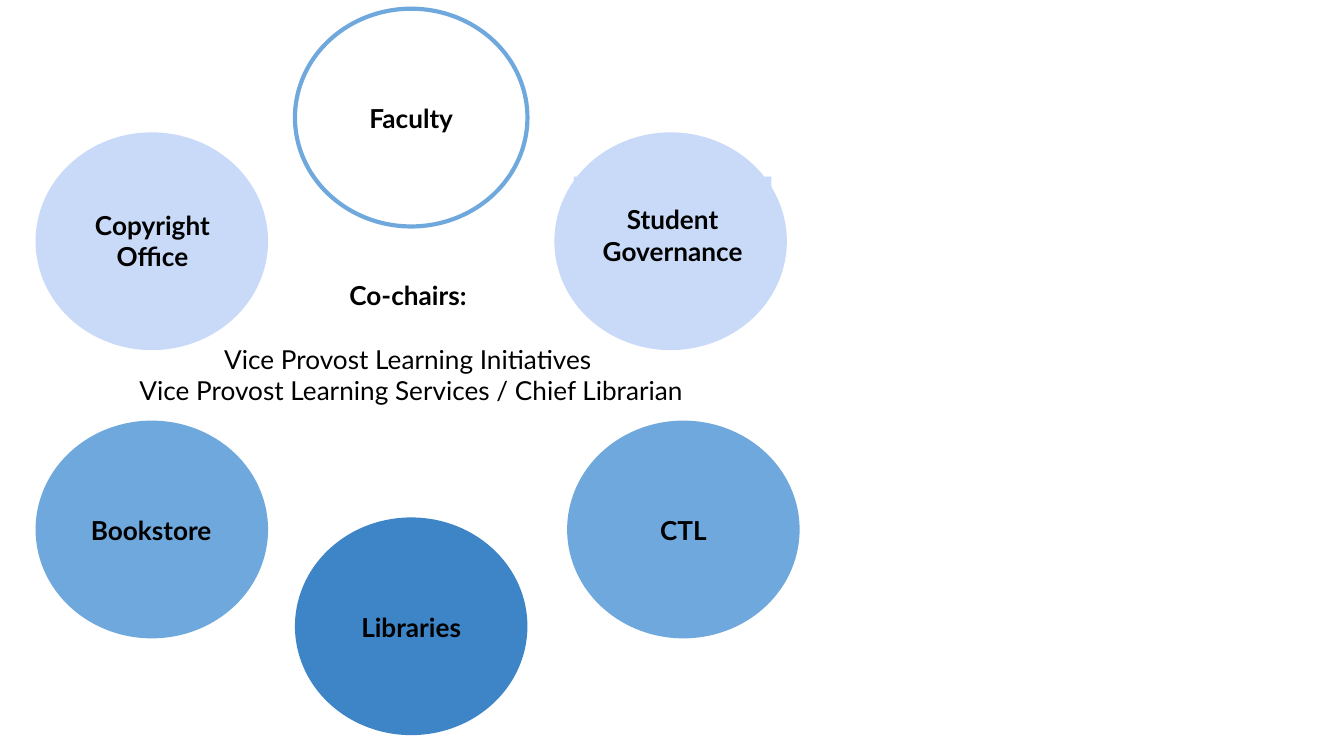
from pptx import Presentation
from pptx import util as u
from pptx.dml.color import RGBColor
from pptx.enum import shapes, text

PX = 4572  # 200 px to the inch
COLORS = {"pale": "C9DAF8", "mid": "6FA8DC", "deep": "3D85C6", "ink": "000000"}
CIRCLE_W, CIRCLE_H = 346, 324


def rgb(name):
    return RGBColor.from_string(COLORS[name])


def add_text(parent, box, lines, fill=None, gap=0):
    """Add a centred text box; lines are (text, bold) pairs, gap follows the first."""
    sp = parent.add_textbox(*(v * PX for v in box))
    if fill:
        sp.fill.solid()
        sp.fill.fore_color.rgb = rgb(fill)
    tf = sp.text_frame
    tf.word_wrap = True
    tf.auto_size = text.MSO_AUTO_SIZE.NONE
    tf.vertical_anchor = text.MSO_ANCHOR.MIDDLE
    tf.margin_left = tf.margin_right = tf.margin_top = tf.margin_bottom = 20 * PX
    for i, (words, bold) in enumerate(lines):
        p = tf.add_paragraph() if i else tf.paragraphs[0]
        p.text = words
        p.alignment = text.PP_ALIGN.CENTER
        p.space_after = u.Pt(0 if i else gap)
        for r in p.runs:
            r.font.name = "Lato"
            r.font.size = u.Pt(14)
            r.font.bold = bold
            r.font.color.rgb = rgb("ink")


prs = Presentation()
prs.slide_width, prs.slide_height = 2000 * PX, 1125 * PX
s = prs.slides.add_slide(prs.slide_layouts[6])

# Members: label, circle left and top, fill, label box
members = [
    ("Faculty", 439, 13, None, (493, 123, 238, 106)),
    ("Bookstore", 53, 626, "mid", (81, 736, 288, 106)),
    ("CTL", 844, 626, "mid", (898, 736, 238, 106)),
    ("Student\nGovernance", 825, 197, "pale", (854, 263, 294, 174)),
    ("Libraries", 439, 770, "deep", (493, 880, 238, 106)),
    ("Copyright Office", 53, 197, "pale", (87, 268, 280, 180)),
]
for label, left, top, fill, label_box in members:
    group = s.shapes.add_group_shape().shapes
    circle = group.add_shape(shapes.MSO_SHAPE.OVAL, left * PX, top * PX,
                             CIRCLE_W * PX, CIRCLE_H * PX)
    circle.shadow.inherit = False
    if fill:
        circle.fill.solid()
        circle.fill.fore_color.rgb = rgb(fill)
        circle.line.fill.background()
    else:
        circle.fill.background()
        circle.line.color.rgb = rgb("mid")
        circle.line.width = u.Pt(2.25)
    add_text(group, label_box, [(label, True)], fill=fill)

add_text(s.shapes, (113, 302, 998, 416), [
    ("Co-chairs: ", True),
    ("Vice Provost Learning Initiatives ", False),
    ("Vice Provost Learning Services / Chief Librarian", False),
], gap=17)

prs.save("out.pptx")
